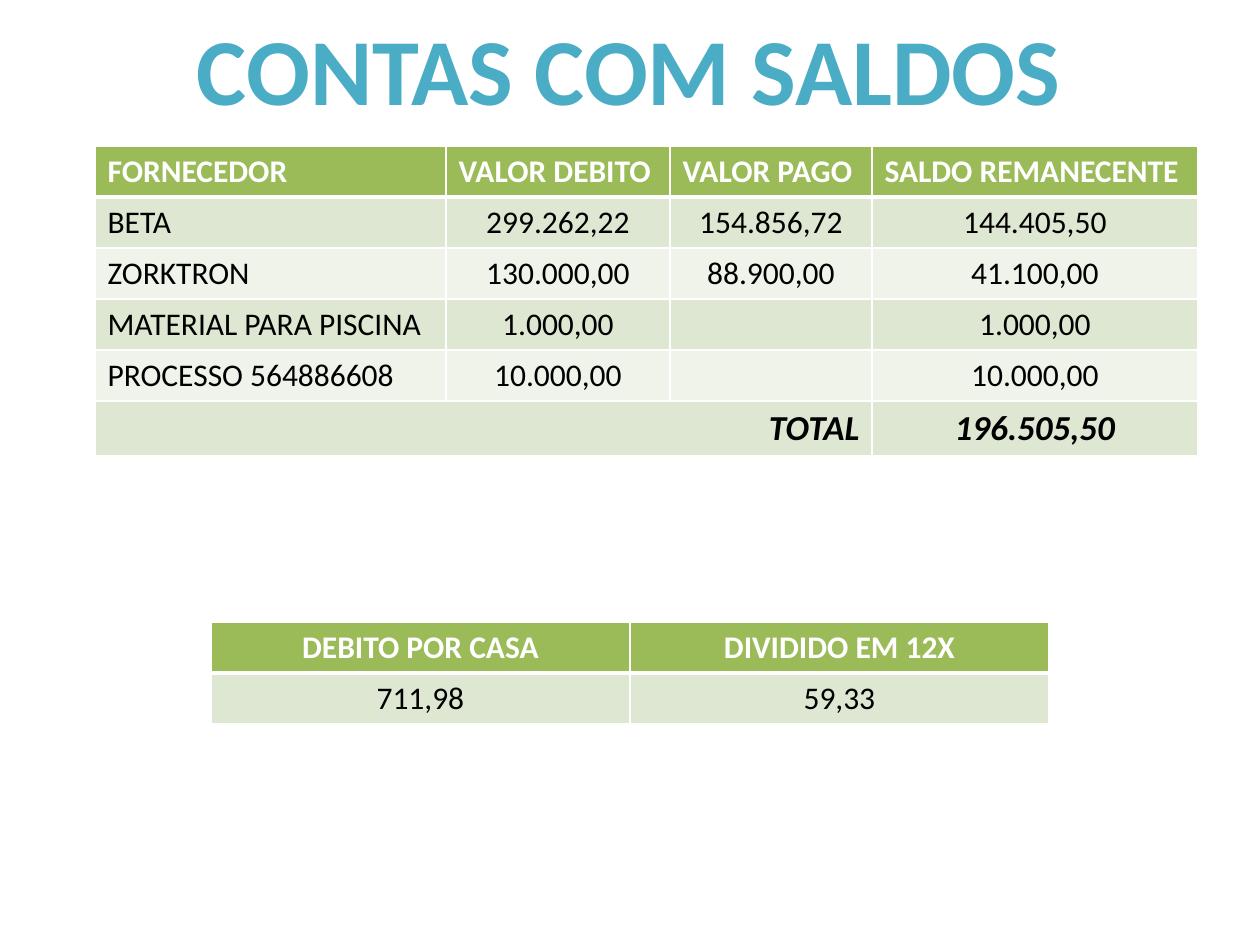
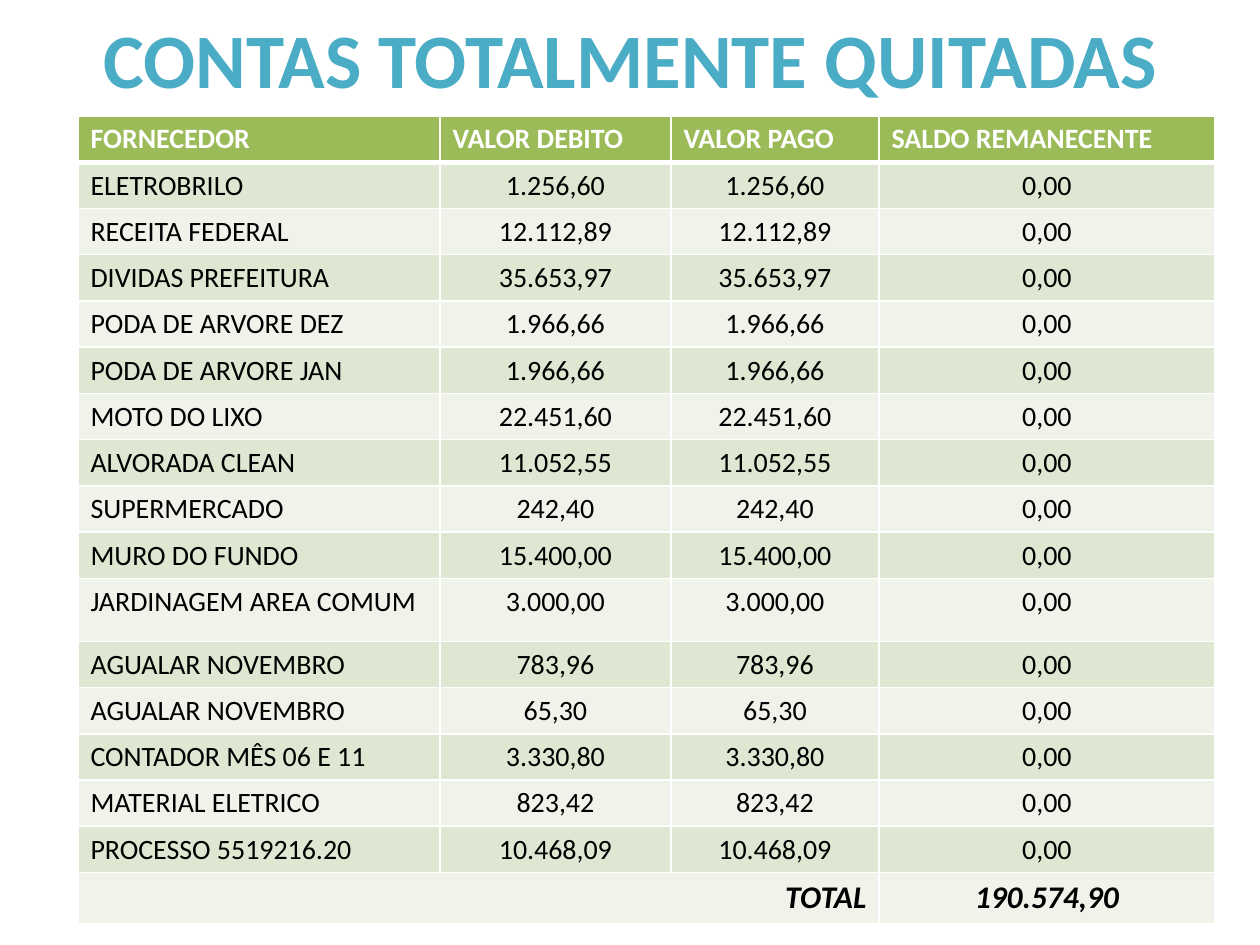
from lxml.etree import SubElement
from pptx import Presentation
from pptx.dml.color import RGBColor
from pptx.enum.text import MSO_ANCHOR, MSO_AUTO_SIZE, PP_ALIGN
from pptx.oxml.ns import qn
from pptx.util import Pt

EMU_PER_PX = 914400 / 126
FONT = "Calibri"
WHITE, BLACK = "FFFFFF", "000000"
TITLE_BLUE, HEADER_GREEN = "4BACC6", "9BBB59"
BANDS = ("DEE7D1", "EFF3EA")
LEFT, CENTER, RIGHT = PP_ALIGN.LEFT, PP_ALIGN.CENTER, PP_ALIGN.RIGHT

HEADINGS = ["FORNECEDOR", "VALOR DEBITO", "VALOR PAGO", "SALDO REMANECENTE"]
OPEN_ACCOUNTS = [
    ["BETA", "299.262,22", "154.856,72", "144.405,50"],
    ["ZORKTRON", "130.000,00", "88.900,00", "41.100,00"],
    ["MATERIAL PARA PISCINA", "1.000,00", "", "1.000,00"],
    ["PROCESSO 564886608", "10.000,00", "", "10.000,00"],
]
SETTLED_ACCOUNTS = [
    ("ELETROBRILO", "1.256,60"),
    ("RECEITA FEDERAL", "12.112,89"),
    ("DIVIDAS PREFEITURA", "35.653,97"),
    ("PODA DE ARVORE DEZ", "1.966,66"),
    ("PODA DE ARVORE JAN", "1.966,66"),
    ("MOTO DO LIXO", "22.451,60"),
    ("ALVORADA CLEAN", "11.052,55"),
    ("SUPERMERCADO", "242,40"),
    ("MURO DO FUNDO", "15.400,00"),
    ("JARDINAGEM AREA COMUM", "3.000,00"),
    ("AGUALAR NOVEMBRO", "783,96"),
    ("AGUALAR NOVEMBRO", "65,30"),
    ("CONTADOR MÊS 06 E 11", "3.330,80"),
    ("MATERIAL ELETRICO", "823,42"),
    ("PROCESSO 5519216.20", "10.468,09"),
]
TALL_ROW = 10  # the gardening row


def px(n):
    return round(n * EMU_PER_PX)


def rgb(hex_color):
    return RGBColor.from_string(hex_color)


def add_line(parent, tag, color, width):
    ln = SubElement(parent, qn(tag), w=str(Pt(width)))
    fill = SubElement(ln, qn("a:solidFill"))
    SubElement(fill, qn("a:srgbClr"), val=color)
    return ln


def write(tf, text, size=18, color=BLACK, bold=False, italic=False, align=LEFT):
    p = tf.paragraphs[0]
    p.alignment = align
    r = p.add_run()
    r.text = text
    font = r.font
    font.name, font.size = FONT, Pt(size)
    font.bold, font.italic = bold, italic
    font.color.rgb = rgb(color)
    return r


def add_title(s, box, text, size):
    title = s.shapes.title
    title.left, title.top, title.width, title.height = map(px, box)
    tf = title.text_frame
    tf.word_wrap = False
    tf.auto_size = MSO_AUTO_SIZE.SHAPE_TO_FIT_TEXT
    tf.vertical_anchor = MSO_ANCHOR.TOP
    r = write(tf, text, size=size, color=TITLE_BLUE, bold=True, align=CENTER)
    rpr = r.font._element
    rpr.insert(0, add_line(rpr, "a:ln", WHITE, 0.75))


def paint_cell(cell, row):
    """Draw white borders, thicker under the header, and the row's fill."""
    tcpr = cell._tc.get_or_add_tcPr()
    for side in "LRTB":
        under_header = (row, side) in ((0, "B"), (1, "T"))
        add_line(tcpr, f"a:ln{side}", WHITE, 3 if under_header else 1)
    cell.fill.solid()
    cell.fill.fore_color.rgb = rgb(BANDS[(row - 1) % 2] if row else HEADER_GREEN)


def add_grid(s, left, top, col_widths, row_heights, rows, size=18, aligns=None, head_align=LEFT):
    """Add a table with a green header and banded rows."""
    frame = s.shapes.add_table(len(row_heights), len(col_widths), px(left), px(top),
                               px(sum(col_widths)), px(sum(row_heights)))
    table = frame.table
    for col, width in zip(table.columns, col_widths):
        col.width = px(width)
    for i, height in enumerate(row_heights):
        table.rows[i].height = px(height)
        for j in range(len(col_widths)):
            paint_cell(table.cell(i, j), i)
    for i, values in enumerate(rows):
        for j, text in enumerate(values):
            if text:
                write(table.cell(i, j).text_frame, text, size=size, bold=i == 0,
                      color=BLACK if i else WHITE, align=aligns[j] if i else head_align)
    return table


def add_accounts(s, left, top, col_widths, row_heights, accounts, total, size):
    """Add the supplier table, closed by a merged total row."""
    table = add_grid(s, left, top, col_widths, row_heights, [HEADINGS] + accounts,
                     size=size, aligns=[LEFT] + [CENTER] * 3)
    last = len(row_heights) - 1
    table.cell(last, 0).merge(table.cell(last, 2))
    for col, text, align in ((0, "TOTAL", RIGHT), (3, total, CENTER)):
        write(table.cell(last, col).text_frame, text, size=size + 2,
              bold=True, italic=True, align=align)


def build_open_accounts(s):
    add_title(s, (180, 5, 898, 127), "CONTAS COM SALDOS", 54)
    add_accounts(s, 95, 146, [351, 224, 202, 326], [51] * 5 + [54],
                 OPEN_ACCOUNTS, "196.505,50", 18)
    add_grid(s, 211, 622, [419] * 2, [51] * 2,
             [["DEBITO POR CASA", "DIVIDIDO EM 12X"], ["711,98", "59,33"]],
             aligns=[CENTER] * 2, head_align=CENTER)


def build_settled_accounts(s):
    add_title(s, (86, 5, 1090, 106), "CONTAS TOTALMENTE QUITADAS", 44)
    heights = [46] * (len(SETTLED_ACCOUNTS) + 1) + [51]
    heights[TALL_ROW] = 63
    accounts = [[name, value, value, "0,00"] for name, value in SETTLED_ACCOUNTS]
    add_accounts(s, 78, 116, [362, 231, 208, 336], heights, accounts, "190.574,90", 16)


def main():
    prs = Presentation()
    prs.slide_width, prs.slide_height = px(1260), px(945)
    title_only = prs.slide_layouts[5]
    for build in (build_open_accounts, build_settled_accounts):
        build(prs.slides.add_slide(title_only))
    prs.save("out.pptx")


if __name__ == "__main__":
    main()
